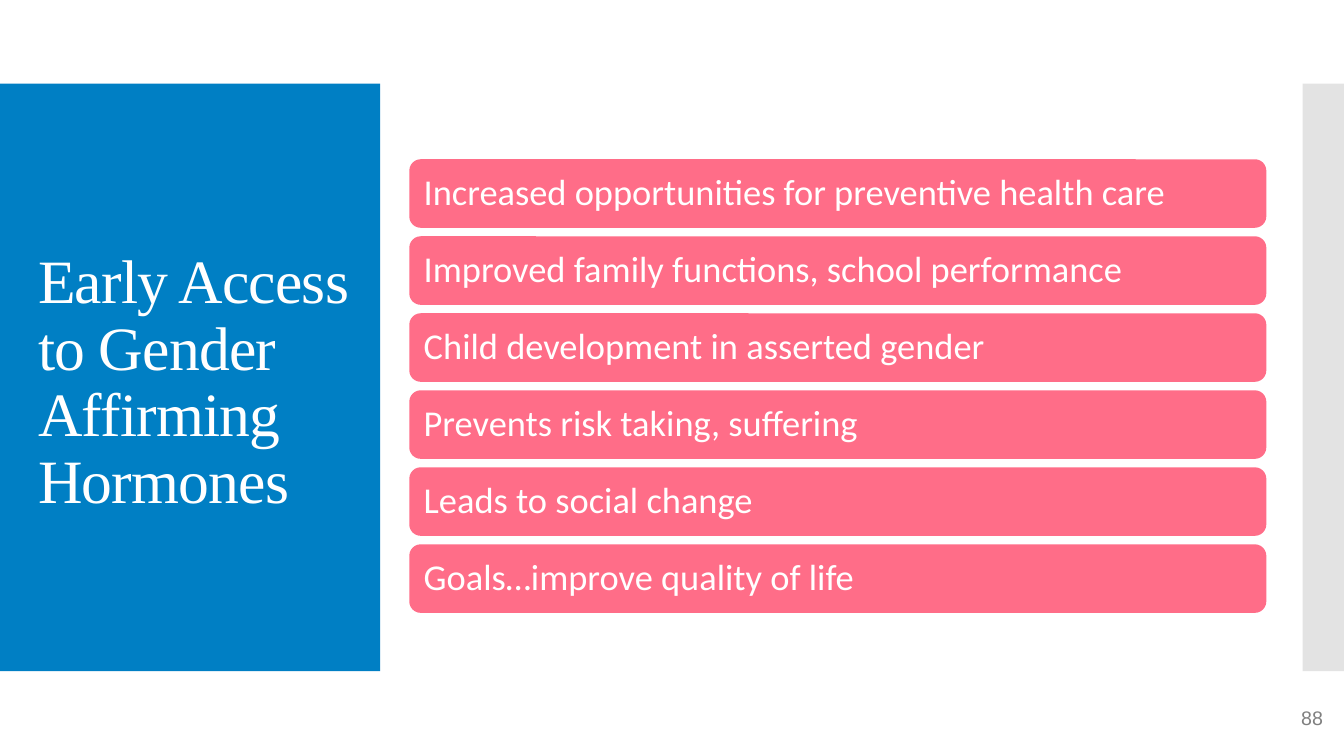
import pptx
import pptx.util
import pptx.dml.color
import pptx.enum.shapes
import pptx.enum.text
import pptx.oxml.ns
import lxml.etree

Inches = pptx.util.Inches
Pt = pptx.util.Pt
Shape = pptx.enum.shapes.MSO_SHAPE
Anchor = pptx.enum.text.MSO_ANCHOR
Align = pptx.enum.text.PP_ALIGN


def paint(target, color):
    if hasattr(target, "solid"):
        target.solid()
        target = target.fore_color
    target.rgb = pptx.dml.color.RGBColor.from_string(color)


def write(box, text, font, size, color, align=Align.LEFT, anchor=Anchor.MIDDLE, line_spacing=0.9):
    frame = box.text_frame
    frame.word_wrap = True
    frame.vertical_anchor = anchor
    para = frame.paragraphs[0]
    para.alignment = align
    para.line_spacing = line_spacing
    span = para.add_run()
    span.text = text
    span.font.name = font
    span.font.size = Pt(size)
    paint(span.font.color, color)
    return span


deck = pptx.Presentation()
deck.slide_width = Inches(13.33)
deck.slide_height = Inches(7.5)
page = deck.slides.add_slide(deck.slide_layouts[6])

panels = []
for left, width, color in [(0, 3.77, "007FC4"), (12.92, 0.41, "C8C8C8")]:
    panel = page.shapes.add_shape(Shape.RECTANGLE, Inches(left), Inches(0.83), Inches(width), Inches(5.83))
    panel.shadow.inherit = False
    paint(panel.fill, color)
    panel.line.fill.background()
    panels.append(panel)

side_color = panels[1].fill._xPr.find(".//" + pptx.oxml.ns.qn("a:srgbClr"))
lxml.etree.SubElement(side_color, pptx.oxml.ns.qn("a:alpha"), val="50000")

title = page.shapes.add_textbox(Inches(0.28), Inches(1.29), Inches(3.78), Inches(5.03))
title_span = write(title, "Early Access to Gender Affirming Hormones", "Times New Roman", 44, "FFFFFF")
title_span._r.get_or_add_rPr().set("spc", "-60")

benefits = [
    "Increased opportunities for preventive health care",
    "Improved family functions, school performance",
    "Child development in asserted gender",
    "Prevents risk taking, suffering",
    "Leads to social change",
    "Goals…improve quality of life",
]
for row, benefit in enumerate(benefits):
    bar = page.shapes.add_shape(
        Shape.ROUNDED_RECTANGLE, Inches(4.06), Inches(1.58 + 0.764 * row), Inches(8.5), Inches(0.68))
    bar.shadow.inherit = False
    paint(bar.fill, "FF6D88")
    bar.line.fill.background()
    frame = bar.text_frame
    frame.margin_left = frame.margin_right = Inches(0.11)
    frame.margin_top = frame.margin_bottom = Inches(0.08)
    write(bar, benefit, "Calibri", 26, "FFFFFF")

number = page.shapes.add_textbox(Inches(9.42), Inches(6.95), Inches(3.8), Inches(0.4))
write(number, "88", "Arial", 14, "808080", Align.RIGHT, Anchor.TOP, 1.0)

deck.save("out.pptx")
